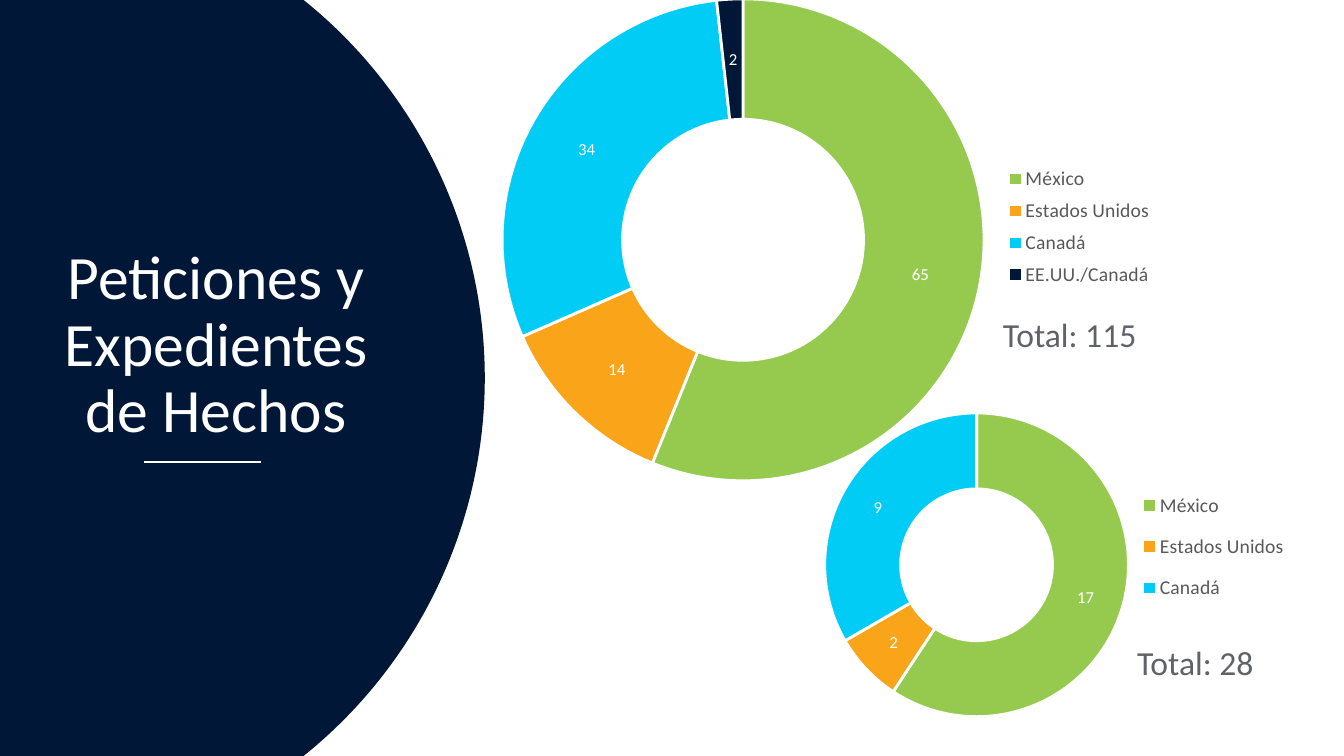
"""Slide with two doughnut charts of petitions and factual records by country."""
from lxml.etree import SubElement
from pptx import Presentation
from pptx.chart.data import CategoryChartData
from pptx.dml.color import RGBColor
from pptx.enum.chart import XL_CHART_TYPE as ChartType, XL_LEGEND_POSITION as LegendPosition
from pptx.enum.shapes import MSO_CONNECTOR as Connector, MSO_SHAPE as Shape
from pptx.enum.text import MSO_ANCHOR as Anchor, MSO_AUTO_SIZE as AutoSize, PP_ALIGN as Align
from pptx.oxml.ns import qn
from pptx.util import Pt

NAVY = RGBColor(0x00, 0x17, 0x38)
GREEN = RGBColor(0x96, 0xCA, 0x4F)
ORANGE = RGBColor(0xFA, 0xA4, 0x1A)
CYAN = RGBColor(0x00, 0xCC, 0xF6)
WHITE = RGBColor(0xFF, 0xFF, 0xFF)
LEGEND_GRAY = RGBColor(0x59, 0x59, 0x59)
TOTAL_GRAY = RGBColor(0x5F, 0x63, 0x69)
FONT = "Calibri"

HEADING = "Peticiones y Expedientes de Hechos"
COUNTRY_COLORS = {"México": GREEN, "Estados Unidos": ORANGE,
                  "Canadá": CYAN, "EE.UU./Canadá": NAVY}
RECORDS = {
    "values": {"México": 16, "Estados Unidos": 2, "Canadá": 9},
    "first_label": "17",
    "frame": (578.2, 203, 353.5, 402.5),
    "ring": (589.1, 295, 217, 217),
    "legend": (812, 340, 110, 101),
    "total": "Total: 28",
    "total_box": (812.2, 458.6, 120.2, 58.3),
}
PETITIONS = {
    "values": {"México": 64, "Estados Unidos": 14, "Canadá": 34, "EE.UU./Canadá": 2},
    "first_label": "65",
    "frame": (347.8, -42.5, 481, 427.7),
    "ring": (358.6, -0.8, 344.3, 344.3),
    "legend": (716, 113.6, 110, 97),
    "total": "Total: 115",
    "total_box": (716.4, 224.6, 120.2, 28.8),
}


def points(box):
    return [Pt(length) for length in box]


def style(font, size, color):
    font.name, font.size = FONT, Pt(size)
    font.color.rgb = color


def add_run(paragraph, text, size, color):
    run = paragraph.add_run()
    run.text = text
    style(run.font, size, color)


def make_layout(parent, box, frame, inner=False):
    for old in parent.findall(qn("c:layout")):
        parent.remove(old)
    layout = SubElement(parent, qn("c:layout"))
    manual = SubElement(layout, qn("c:manualLayout"))
    if inner:
        SubElement(manual, qn("c:layoutTarget")).set("val", "inner")
    for mode in ("xMode", "yMode"):
        SubElement(manual, qn("c:" + mode)).set("val", "edge")
    left, top, width, height = box
    fractions = {"x": (left - frame[0]) / frame[2], "y": (top - frame[1]) / frame[3],
                 "w": width / frame[2], "h": height / frame[3]}
    for key, fraction in fractions.items():
        SubElement(manual, qn("c:" + key)).set("val", f"{fraction:.4f}")
    return layout


def add_doughnut(slide, group):
    chart_data = CategoryChartData()
    chart_data.categories = list(group["values"])
    chart_data.add_series("Series 1", list(group["values"].values()))
    graphic = slide.shapes.add_chart(ChartType.DOUGHNUT, *points(group["frame"]), chart_data)
    chart = graphic.chart
    chart.has_title = False
    chart.font.name, chart.font.size = FONT, Pt(10)

    chart.has_legend = True
    chart.legend.position = LegendPosition.RIGHT
    chart.legend.include_in_layout = False
    style(chart.legend.font, 14, LEGEND_GRAY)

    plot = chart.plots[0]
    plot.vary_by_categories = True
    plot.has_data_labels = True
    plot.data_labels.show_value = True
    plot.data_labels.show_percentage = False
    style(plot.data_labels.font, 12, WHITE)

    series = plot.series[0]
    for index, country in enumerate(group["values"]):
        slice_format = series.points[index].format
        slice_format.fill.solid()
        slice_format.fill.fore_color.rgb = COUNTRY_COLORS[country]
        slice_format.line.color.rgb = WHITE
        slice_format.line.width = Pt(2)
    series_labels = series.data_labels
    series_labels.show_value = True
    style(series_labels.font, 12, WHITE)
    first_label = series.points[0].data_label.text_frame
    add_run(first_label.paragraphs[0], group["first_label"], 12, WHITE)

    root = chart.element
    root.find(".//" + qn("c:holeSize")).set("val", "69")
    plot_area = root.find(".//" + qn("c:plotArea"))
    plot_area.insert(0, make_layout(plot_area, group["ring"], group["frame"], inner=True))
    legend = root.find(".//" + qn("c:legend"))
    legend_layout = make_layout(legend, group["legend"], group["frame"])
    legend.find(qn("c:legendPos")).addnext(legend_layout)
    return graphic


def add_total(slide, group):
    frame = slide.shapes.add_textbox(*points(group["total_box"])).text_frame
    frame.word_wrap = True
    frame.auto_size = AutoSize.SHAPE_TO_FIT_TEXT
    frame.margin_left = frame.margin_right = frame.margin_top = frame.margin_bottom = 0
    add_run(frame.paragraphs[0], group["total"], 24, TOTAL_GRAY)


def main():
    deck = Presentation()
    deck.slide_width, deck.slide_height = Pt(960), Pt(540)
    slide = deck.slides.add_slide(deck.slide_layouts[0])
    subtitle = slide.placeholders[1].element
    subtitle.getparent().remove(subtitle)

    disc = slide.shapes.add_shape(Shape.OVAL, *points((-346.3, -76.3, 692.6, 692.6)))
    disc.shadow.inherit = False
    disc.fill.solid()
    disc.fill.fore_color.rgb = NAVY
    disc.line.fill.background()

    rule = slide.shapes.add_connector(Connector.STRAIGHT, *points((103, 330, 186.5, 330)))
    rule.line.color.rgb = WHITE
    rule.line.width = Pt(2)
    SubElement(rule.element.spPr, qn("a:effectLst"))

    records_chart = add_doughnut(slide, RECORDS)

    heading = slide.shapes.title
    heading.left, heading.top, heading.width, heading.height = points((11.5, 59, 285.8, 376.6))
    records_chart.element.addnext(heading.element)
    frame = heading.text_frame
    frame.word_wrap = True
    frame.auto_size = AutoSize.NONE
    frame.vertical_anchor = Anchor.MIDDLE
    frame.margin_left = frame.margin_right = Pt(14)
    paragraph = frame.paragraphs[0]
    paragraph.alignment = Align.CENTER
    paragraph.line_spacing = 0.9
    add_run(paragraph, HEADING, 44, WHITE)

    add_doughnut(slide, PETITIONS)
    for group in (PETITIONS, RECORDS):
        add_total(slide, group)

    deck.save("out.pptx")


if __name__ == "__main__":
    main()
